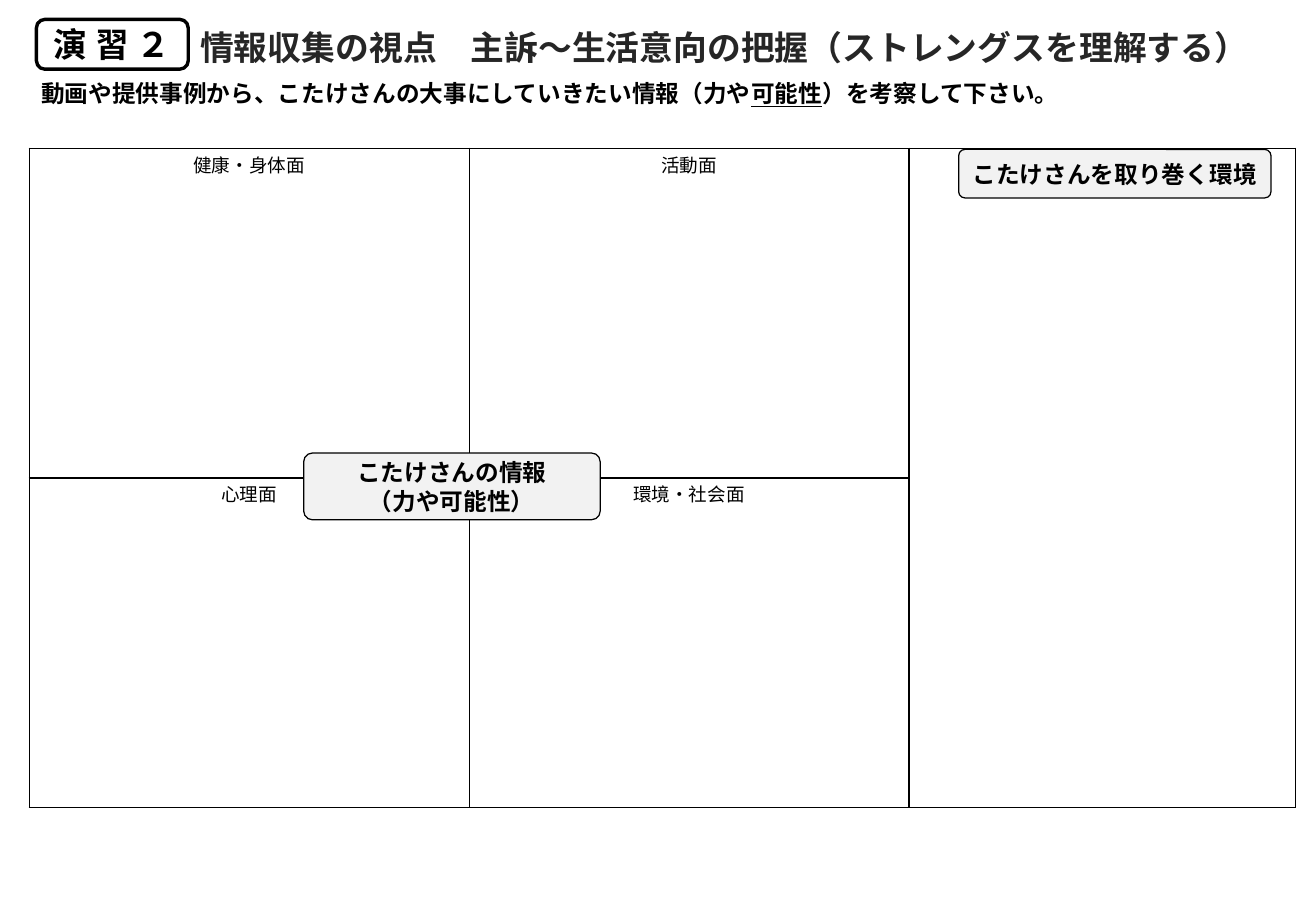
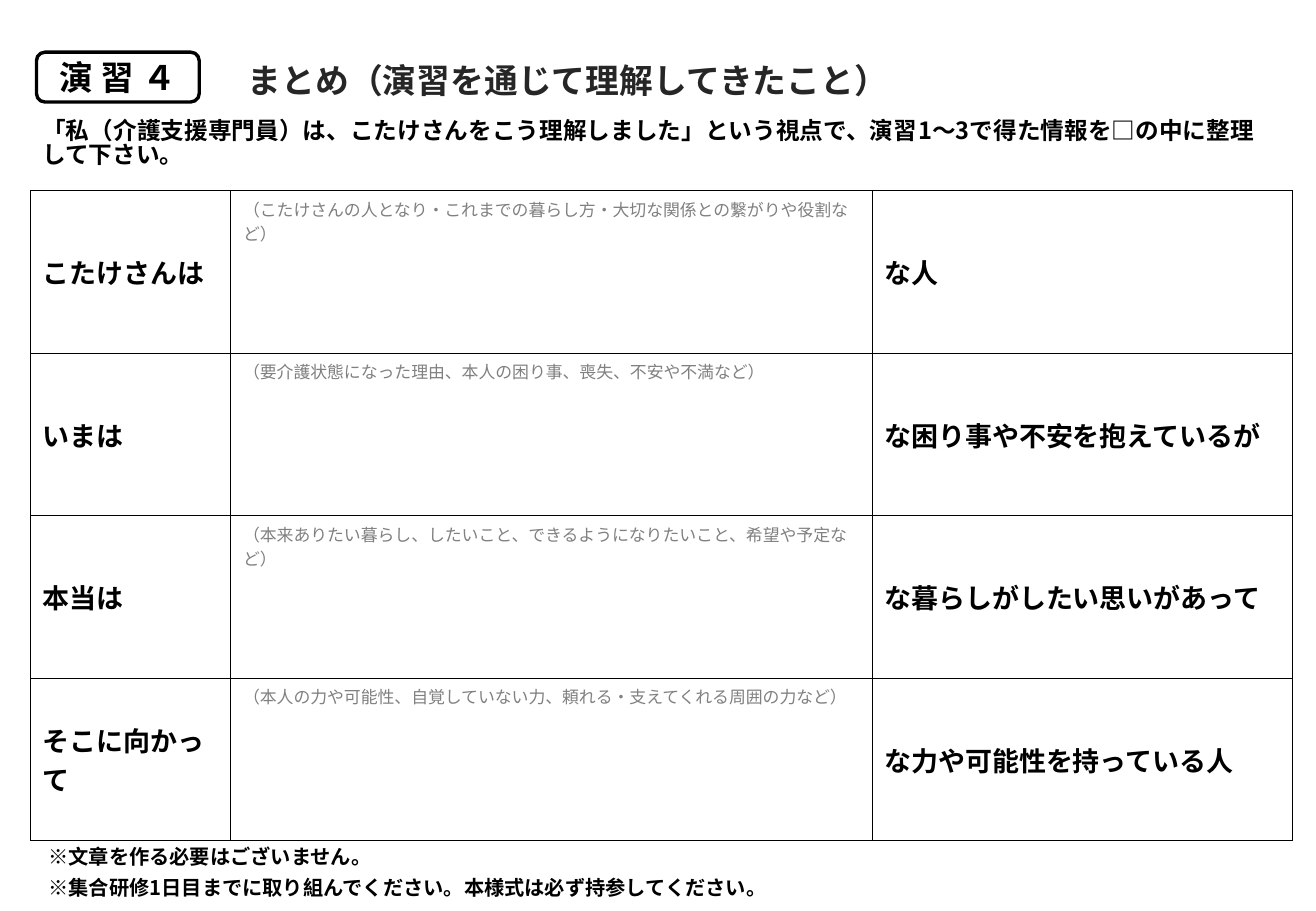
from lxml import etree
from pptx import Presentation
from pptx.dml.color import RGBColor
from pptx.enum.shapes import MSO_SHAPE
from pptx.enum.text import MSO_ANCHOR, MSO_AUTO_SIZE, PP_ALIGN
from pptx.oxml.ns import qn
from pptx.util import Inches, Pt

ROUNDED = MSO_SHAPE.ROUNDED_RECTANGLE
TOP, MIDDLE = MSO_ANCHOR.TOP, MSO_ANCHOR.MIDDLE
LEFT, CENTER = PP_ALIGN.LEFT, PP_ALIGN.CENTER
GROW = MSO_AUTO_SIZE.SHAPE_TO_FIT_TEXT

COLORS = {"ink": "000000", "title": "262626", "hint": "808080", "paper": "FFFFFF", "label": "F2F2F2"}
NOTO, CALIBRI = "Noto Sans CJK JP", "Calibri"

# Text styles: size, font, colour, bold, alignment, line spacing, space before
STYLES = {
    "title": (20, NOTO, "title", True, LEFT, 1.33, 0),
    "task": (14, NOTO, "ink", True, LEFT, 0.85, 0),
    "note": (12, NOTO, "ink", True, LEFT, 0.85, 6),
    "exercise": (20, NOTO, "ink", True, CENTER, 1, 0),
    "label": (14, CALIBRI, "ink", True, CENTER, 1, 0),
    "aspect": (11, CALIBRI, "ink", False, CENTER, 1, 0),
    "phrase": (16, NOTO, "ink", True, LEFT, 1, 0),
    "hint": (10, NOTO, "hint", False, LEFT, 1, 0),
}
# Rounded boxes: fill, line width, corner
BOXES = {"exercise": ("paper", 2, 0.17), "label": ("label", 0.75, 0.13)}

# Places and sizes are percentages of the slide's width and height
SLIDES = [
    {
        "table": (2.22, 16.27, [33.43, 33.43, 29.36], 36.2),
        "styles": ["aspect"] * 3,
        "rows": [["健康・身体面", "活動面", ""], ["心理面", "環境・社会面", ""]],
        "merge": ((0, 2), (1, 2)),
        "texts": [
            ("task", 2.22, 8.53, 94.37, 4.53,
             "動画や提供事例から、こたけさんの大事にしていきたい情報（力や_可能性_）を考察して下さい。"),
            ("label", 23.08, 49.73, 22.53, 7.33, "こたけさんの情報\n（力や可能性）"),
            ("label", 72.85, 16.4, 23.73, 5.33, "こたけさんを取り巻く環境"),
            ("exercise", 2.77, 2.13, 11.54, 5.47, "演 習 ２"),
            ("title", 14.31, 0.8, 83.93, 7.2, "情報収集の視点　主訴～生活意向の把握（ストレングスを理解する）"),
        ],
    },
    {
        "table": (2.31, 20.93, [15.24, 48.75, 31.95], 17.84),
        "styles": ["phrase", "hint", "phrase"],
        "rows": [
            ["こたけさんは", "（こたけさんの人となり・これまでの暮らし方・大切な関係との繋がりや役割など）", "な人"],
            ["いまは", "（要介護状態になった理由、本人の困り事、喪失、不安や不満など）", "な困り事や不安を抱えているが"],
            ["本当は", "（本来ありたい暮らし、したいこと、できるようになりたいこと、希望や予定など）", "な暮らしがしたい思いがあって"],
            ["そこに向かって", "（本人の力や可能性、自覚していない力、頼れる・支えてくれる周囲の力など）", "な力や可能性を持っている人"],
        ],
        "merge": None,
        "texts": [
            ("task", 2.31, 12.53, 94.37, 4.53,
             "「私（介護支援専門員）は、こたけさんをこう理解しました」という視点で、演習1～3で得た情報を□の中に整理して下さい。"),
            ("note", 2.77, 92.4, 87.9, 7.87,
             "※文章を作る必要はございません。\n※集合研修1日目までに取り組んでください。本様式は必ず持参してください。"),
            ("exercise", 2.77, 5.73, 12.37, 5.47, "演 習 ４"),
            ("title", 17.91, 4.4, 78.67, 7.2, "まとめ（演習を通じて理解してきたこと）"),
        ],
    },
]


def rgb(name):
    return RGBColor.from_string(COLORS[name])


def write(tf, text, style):
    """Fill a text frame in a named style; parts between underscores are underlined."""
    size, font, color, bold, align, spacing, before = STYLES[style]
    first, *rest = text.split("_")
    tf.text = first
    for part in rest:
        tf.paragraphs[-1].add_run().text = part
    for p in tf.paragraphs:
        p.alignment, p.line_spacing, p.space_before = align, spacing, Pt(before)
        for i, r in enumerate(p.runs):
            r.font.size, r.font.name, r.font.bold = Pt(size), font, bold
            r.font.color.rgb = rgb(color)
            if i % 2:
                r.font.underline = True
            etree.SubElement(r.font._element, qn("a:ea"), typeface=font)


prs = Presentation()
prs.slide_width, prs.slide_height = Inches(10.83), Inches(7.5)
W, H = prs.slide_width / 100, prs.slide_height / 100

for content in SLIDES:
    s = prs.slides.add_slide(prs.slide_layouts[6])

    x, y, widths, row_height = content["table"]
    rows = content["rows"]
    table = s.shapes.add_table(len(rows), len(widths), int(x * W), int(y * H),
                               int(sum(widths) * W), int(row_height * len(rows) * H)).table
    for column, width in zip(table.columns, widths):
        column.width = int(width * W)
    for i, texts in enumerate(rows):
        table.rows[i].height = int(row_height * H)
        for j, (text, style) in enumerate(zip(texts, content["styles"])):
            cell = table.cell(i, j)
            cell.fill.solid()
            cell.fill.fore_color.rgb = rgb("paper")
            cell.vertical_anchor = MIDDLE if style == "phrase" else TOP
            write(cell.text_frame, text, style)
            tcPr = cell._tc.get_or_add_tcPr()
            for k, side in enumerate(("lnL", "lnR", "lnT", "lnB")):
                ln = etree.Element(qn(f"a:{side}"), w=str(Pt(0.75)))
                fill = etree.SubElement(ln, qn("a:solidFill"))
                etree.SubElement(fill, qn("a:srgbClr"), val=COLORS["ink"])
                tcPr.insert(k, ln)
    if content["merge"]:
        start, end = content["merge"]
        table.cell(*start).merge(table.cell(*end))

    for style, x, y, w, h, text in content["texts"]:
        place = int(x * W), int(y * H), int(w * W), int(h * H)
        if style in BOXES:
            fill, line, corner = BOXES[style]
            sp = s.shapes.add_shape(ROUNDED, *place)
            sp.shadow.inherit = False
            sp.adjustments[0] = corner
            sp.fill.solid()
            sp.fill.fore_color.rgb = rgb(fill)
            sp.line.color.rgb = rgb("ink")
            sp.line.width = Pt(line)
            sp.text_frame.vertical_anchor = MIDDLE
        else:
            sp = s.shapes.add_textbox(*place)
            sp.text_frame.auto_size = GROW
        sp.text_frame.word_wrap = True
        write(sp.text_frame, text, style)

prs.save("out.pptx")
